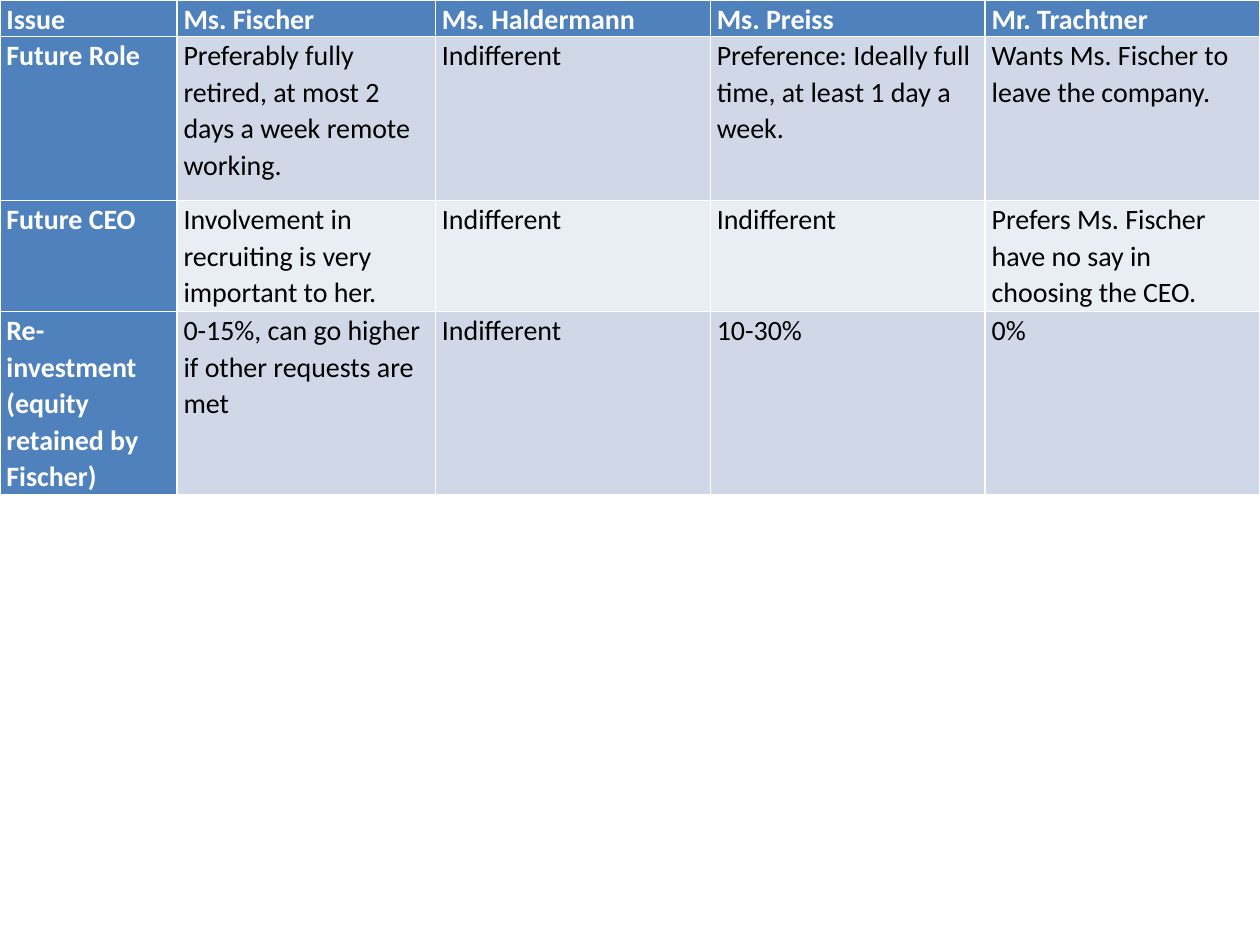
"""Build a one-slide table comparing each party's negotiation positions."""
from pptx import Presentation
from pptx.dml.color import RGBColor
from pptx.enum.text import PP_ALIGN
from pptx.util import Cm, Pt

JUSTIFY, LEFT = PP_ALIGN.JUSTIFY, PP_ALIGN.LEFT

WHITE = RGBColor(0xFF, 0xFF, 0xFF)
BLACK = RGBColor(0x00, 0x00, 0x00)
BLUE = RGBColor(0x4F, 0x81, 0xBD)
BANDS = (RGBColor(0xD0, 0xD8, 0xE8), RGBColor(0xE9, 0xED, 0xF4))

POSITIONS = [
    ("Issue", "Ms. Fischer", "Ms. Haldermann", "Ms. Preiss", "Mr. Trachtner"),
    ("Future Role",
     "Preferably fully retired, at most 2 days a week remote working.",
     "Indifferent",
     "Preference: Ideally full time, at least 1 day a week.",
     "Wants Ms. Fischer to leave the company."),
    ("Future CEO",
     "Involvement in recruiting is very important to her.",
     "Indifferent",
     "Indifferent",
     "Prefers Ms. Fischer have no say in choosing the CEO."),
    ("Re-investment (equity retained by Fischer)",
     "0-15%, can go higher if other requests are met",
     "Indifferent",
     "10-30%",
     "0%"),
]
COL_WIDTHS = (3.57, 5.21, 5.54, 5.54, 5.54)
ROW_HEIGHTS = (0.71, 3.3, 2.24, 3)
TABLE_HEIGHT = 9.86


def fill_cell(cell, text, row, col):
    heading = row == 0 or col == 0
    cell.margin_left = cell.margin_right = Cm(0.13)
    cell.margin_top = cell.margin_bottom = 0
    cell.fill.solid()
    cell.fill.fore_color.rgb = BLUE if heading else BANDS[(row - 1) % 2]
    p = cell.text_frame.paragraphs[0]
    p.text = text
    p.alignment = JUSTIFY if row == 0 else LEFT
    p.line_spacing = 1.07
    p.space_after = Pt(8)
    p.font.name = "Calibri"
    p.font.size = Pt(16)
    p.font.bold = heading
    p.font.color.rgb = WHITE if heading else BLACK


def main():
    prs = Presentation()
    prs.slide_width, prs.slide_height = Cm(25.4), Cm(19.05)
    s = prs.slides.add_slide(prs.slide_layouts.get_by_name("Blank"))

    frame = s.shapes.add_table(len(ROW_HEIGHTS), len(COL_WIDTHS), 0, 0,
                               prs.slide_width, Cm(TABLE_HEIGHT))
    table = frame.table
    table.first_col = True
    for column, width in zip(table.columns, COL_WIDTHS):
        column.width = Cm(width)
    for row, height in zip(table.rows, ROW_HEIGHTS):
        row.height = Cm(height)
    frame.height = Cm(TABLE_HEIGHT)

    for i, texts in enumerate(POSITIONS):
        for j, text in enumerate(texts):
            fill_cell(table.cell(i, j), text, i, j)

    prs.save("out.pptx")


if __name__ == "__main__":
    main()
